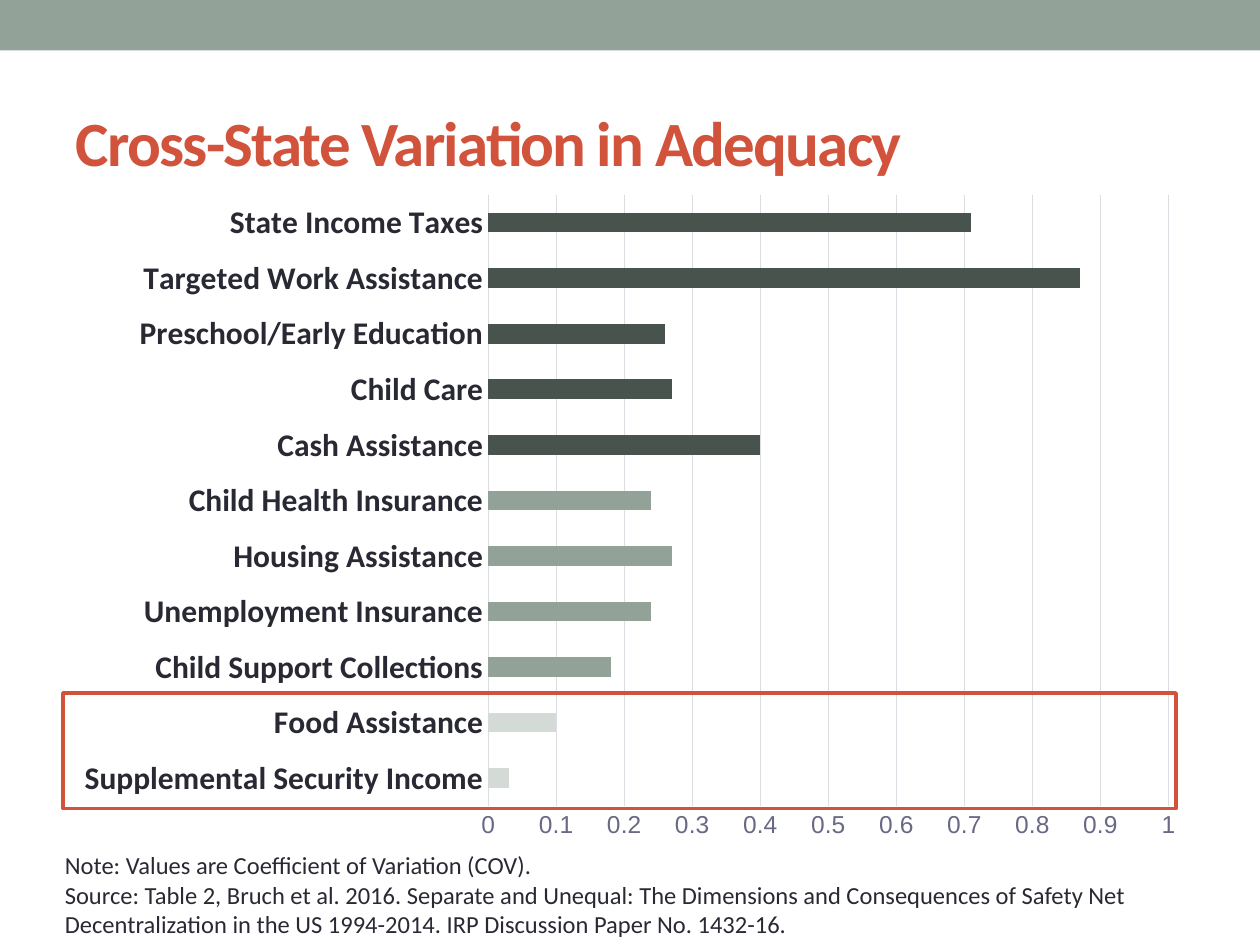
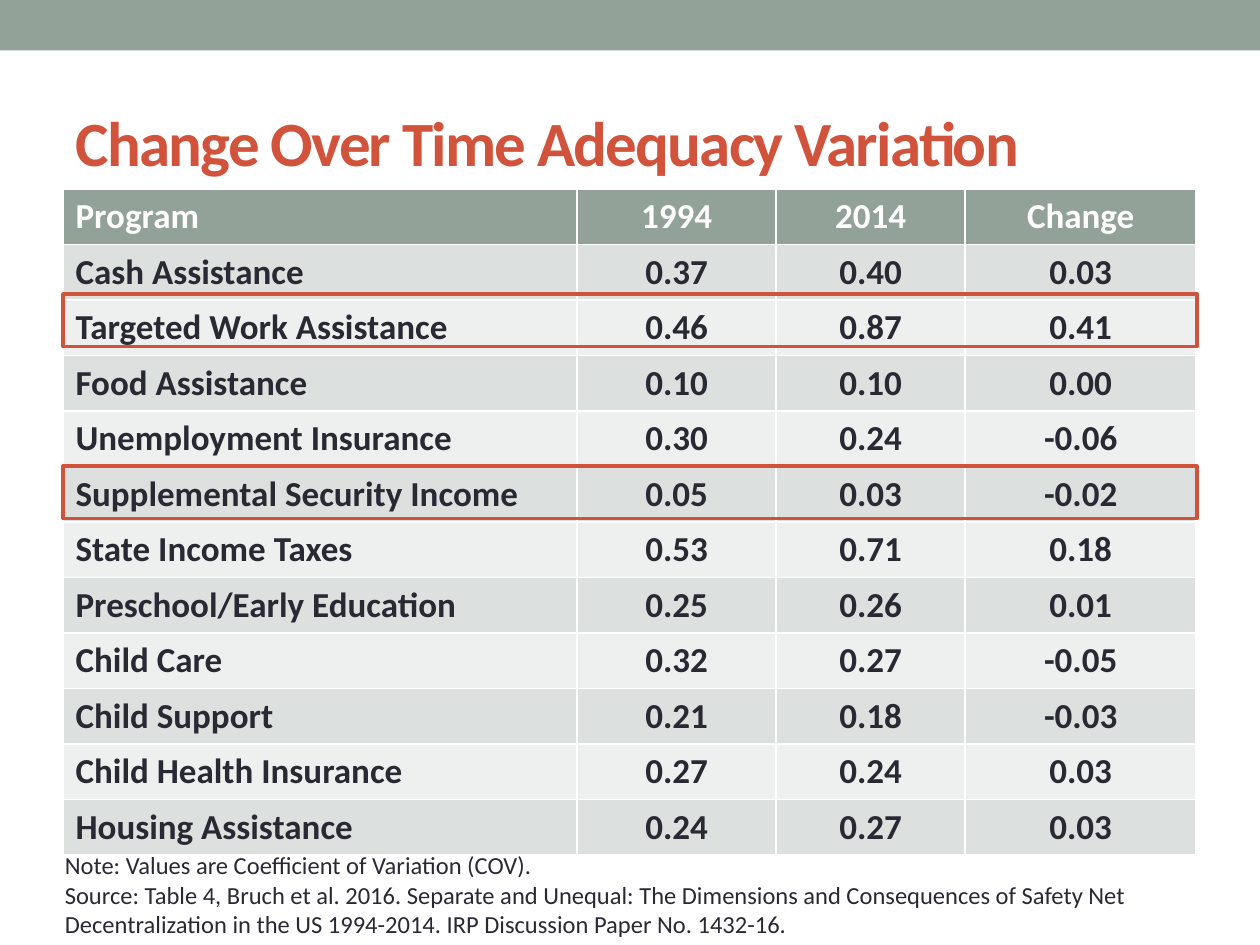
from lxml import etree
from pptx import Presentation
from pptx.chart.data import CategoryChartData
from pptx.dml.color import RGBColor
from pptx.enum.chart import XL_CHART_TYPE, XL_TICK_MARK
from pptx.enum.shapes import MSO_SHAPE
from pptx.enum.text import MSO_ANCHOR, MSO_AUTO_SIZE, PP_ALIGN
from pptx.oxml.ns import qn
from pptx.util import Pt

BAR_CLUSTERED = XL_CHART_TYPE.BAR_CLUSTERED
NO_TICK = XL_TICK_MARK.NONE
RECT = MSO_SHAPE.RECTANGLE
MIDDLE = MSO_ANCHOR.MIDDLE
NO_FIT, GROW = MSO_AUTO_SIZE.NONE, MSO_AUTO_SIZE.SHAPE_TO_FIT_TEXT
LEFT, CENTER = PP_ALIGN.LEFT, PP_ALIGN.CENTER

SAGE, PALE, DARK = "93A299", "D4DAD6", "47534C"
RED, INK, WHITE = "D2533C", "292934", "FFFFFF"
GRID, AXIS_TEXT = "DCDCE3", "696986"
BANDS = ("DCE0DE", "EEF0EF")

MARGIN, CONTENT_W = 36, 648
NOTES = (
    "Note: Values are Coefficient of Variation (COV).",
    "Source: Table {}, Bruch et al. 2016. Separate and Unequal: The Dimensions and Consequences "
    "of Safety Net Decentralization in the US 1994-2014. IRP Discussion Paper No. 1432-16.",
)

VARIATION = [
    ("Supplemental Security Income", 0.03, PALE),
    ("Food Assistance", 0.1, PALE),
    ("Child Support Collections", 0.18, SAGE),
    ("Unemployment Insurance", 0.24, SAGE),
    ("Housing Assistance", 0.27, SAGE),
    ("Child Health Insurance", 0.24, SAGE),
    ("Cash Assistance", 0.4, DARK),
    ("Child Care", 0.27, DARK),
    ("Preschool/Early Education", 0.26, DARK),
    ("Targeted Work Assistance", 0.87, DARK),
    ("State Income Taxes", 0.71, DARK),
]
PLOT_LAYOUT = {"x": 0.375, "y": 0.02, "w": 0.6, "h": 0.91}

COLUMN_WIDTHS = (293.8, 113.8, 108, 132)
CHANGES = [
    ("Program", "1994", "2014", "Change"),
    ("Cash Assistance", "0.37", "0.40", "0.03"),
    ("Targeted Work Assistance", "0.46", "0.87", "0.41"),
    ("Food Assistance", "0.10", "0.10", "0.00"),
    ("Unemployment Insurance", "0.30", "0.24", "-0.06"),
    ("Supplemental Security Income", "0.05", "0.03", "-0.02"),
    ("State Income Taxes", "0.53", "0.71", "0.18"),
    ("Preschool/Early Education", "0.25", "0.26", "0.01"),
    ("Child Care", "0.32", "0.27", "-0.05"),
    ("Child Support", "0.21", "0.18", "-0.03"),
    ("Child Health Insurance", "0.27", "0.24", "0.03"),
    ("Housing Assistance", "0.24", "0.27", "0.03"),
]


def rgb(value):
    """Turn a hex string into a colour."""
    return RGBColor.from_string(value)


def paint(fill, color):
    """Give a fill one solid colour."""
    fill.solid()
    fill.fore_color.rgb = rgb(color)


def rule(line, color, width=0.75):
    """Give a line its colour and width."""
    line.color.rgb = rgb(color)
    line.width = Pt(width)


def set_font(font, size, color=INK, name="Calibri", bold=False):
    """Format a font of a run or a chart part."""
    font.name, font.size, font.bold = name, Pt(size), bold
    font.color.rgb = rgb(color)


def write(tf, *lines, align=LEFT, spacing=None, **fmt):
    """Fill a text frame with one formatted paragraph per line."""
    for i, text in enumerate(lines):
        p = tf.add_paragraph() if i else tf.paragraphs[0]
        p.alignment = align
        r = p.add_run()
        r.text = text
        set_font(r.font, **fmt)
        if spacing:
            r._r.get_or_add_rPr().set("spc", str(spacing * 100))


def place(sp, left, top, width, height):
    """Move and size a shape in points."""
    sp.left, sp.top, sp.width, sp.height = map(Pt, (left, top, width, height))


def add_rect(s, left, top, width, height):
    """Add a rectangle without a shadow."""
    sp = s.shapes.add_shape(RECT, *map(Pt, (left, top, width, height)))
    sp.shadow.inherit = False
    return sp


def add_highlight(s, top, width, height):
    """Outline rows that stand out."""
    sp = add_rect(s, MARGIN, top, width, height)
    sp.fill.background()
    rule(sp.line, RED, 2.08)


def add_base(prs, title):
    """Add a slide with its top band and title."""
    s = prs.slides.add_slide(prs.slide_layouts[5])
    band = add_rect(s, 0, 0, 720, 28.8)
    paint(band.fill, SAGE)
    band.line.fill.background()
    sp = s.shapes.title
    place(sp, MARGIN, 41.8, CONTENT_W, 77.8)
    tf = sp.text_frame
    tf.auto_size, tf.vertical_anchor = NO_FIT, MIDDLE
    write(tf, title, size=36, color=RED, bold=True, spacing=-1)
    return s


def add_notes(s, table_number):
    """Add the note and source lines."""
    tf = s.shapes.add_textbox(Pt(30), Pt(482.4), Pt(654), Pt(58.3)).text_frame
    tf.word_wrap, tf.auto_size = True, GROW
    write(tf, *(line.format(table_number) for line in NOTES), size=14)


def set_plot_layout(chart):
    """Fix the inner plot area as fractions of the chart."""
    plot_area = chart.element.find(".//" + qn("c:plotArea"))
    for old in plot_area.findall(qn("c:layout")):
        plot_area.remove(old)
    layout = etree.Element(qn("c:layout"))
    manual = etree.SubElement(layout, qn("c:manualLayout"))
    settings = {"layoutTarget": "inner", "xMode": "edge", "yMode": "edge", **PLOT_LAYOUT}
    for tag, value in settings.items():
        etree.SubElement(manual, qn("c:" + tag)).set("val", str(value))
    plot_area.insert(0, layout)


def add_variation_chart(s):
    """Add the bar chart of variation by program."""
    names, values, colors = zip(*VARIATION)
    data = CategoryChartData()
    data.categories = names
    data.add_series("Series 1", values)
    chart = s.shapes.add_chart(BAR_CLUSTERED, Pt(MARGIN), Pt(103.7), Pt(CONTENT_W), Pt(383.8), data).chart
    chart.has_title = chart.has_legend = False
    set_font(chart.font, 10, name="Arial")
    set_plot_layout(chart)

    plot = chart.plots[0]
    plot.gap_width, plot.vary_by_categories = 182, False
    series = plot.series[0]
    series.invert_if_negative = False
    paint(series.format.fill, SAGE)
    for i, color in enumerate(colors):
        if color != SAGE:
            paint(series.points[i].format.fill, color)

    cat, val = chart.category_axis, chart.value_axis
    for axis in (cat, val):
        axis.major_tick_mark = axis.minor_tick_mark = NO_TICK
    set_font(cat.tick_labels.font, 18, bold=True)
    rule(cat.format.line, GRID)
    set_font(val.tick_labels.font, 14, AXIS_TEXT, "Arial")
    val.format.line.fill.background()
    val.minimum_scale, val.maximum_scale, val.major_unit = 0, 1, 0.1
    val.has_major_gridlines = True
    rule(val.major_gridlines.format.line, GRID)


def add_change_table(s):
    """Add the table of change by program."""
    table = s.shapes.add_table(
        len(CHANGES), len(COLUMN_WIDTHS), Pt(MARGIN), Pt(108), Pt(CONTENT_W), Pt(374.4)
    ).table
    for column, width in zip(table.columns, COLUMN_WIDTHS):
        column.width = Pt(width)
    for i, row in enumerate(CHANGES):
        for j, text in enumerate(row):
            cell = table.cell(i, j)
            paint(cell.fill, BANDS[(i - 1) % 2] if i else SAGE)
            write(cell.text_frame, text, align=CENTER if j else LEFT,
                  size=20, color=INK if i else WHITE, bold=True)


def main():
    """Build both slides and save them."""
    prs = Presentation()
    prs.slide_width, prs.slide_height = Pt(720), Pt(540)

    s = add_base(prs, "Cross-State Variation in Adequacy")
    add_variation_chart(s)
    add_notes(s, 2)
    add_highlight(s, 396, 636, 66)

    s = add_base(prs, "Change Over Time Adequacy Variation")
    add_change_table(s)
    add_notes(s, 4)
    for top in (168, 266.4):
        add_highlight(s, top, CONTENT_W, 30)

    prs.save("out.pptx")


if __name__ == "__main__":
    main()
